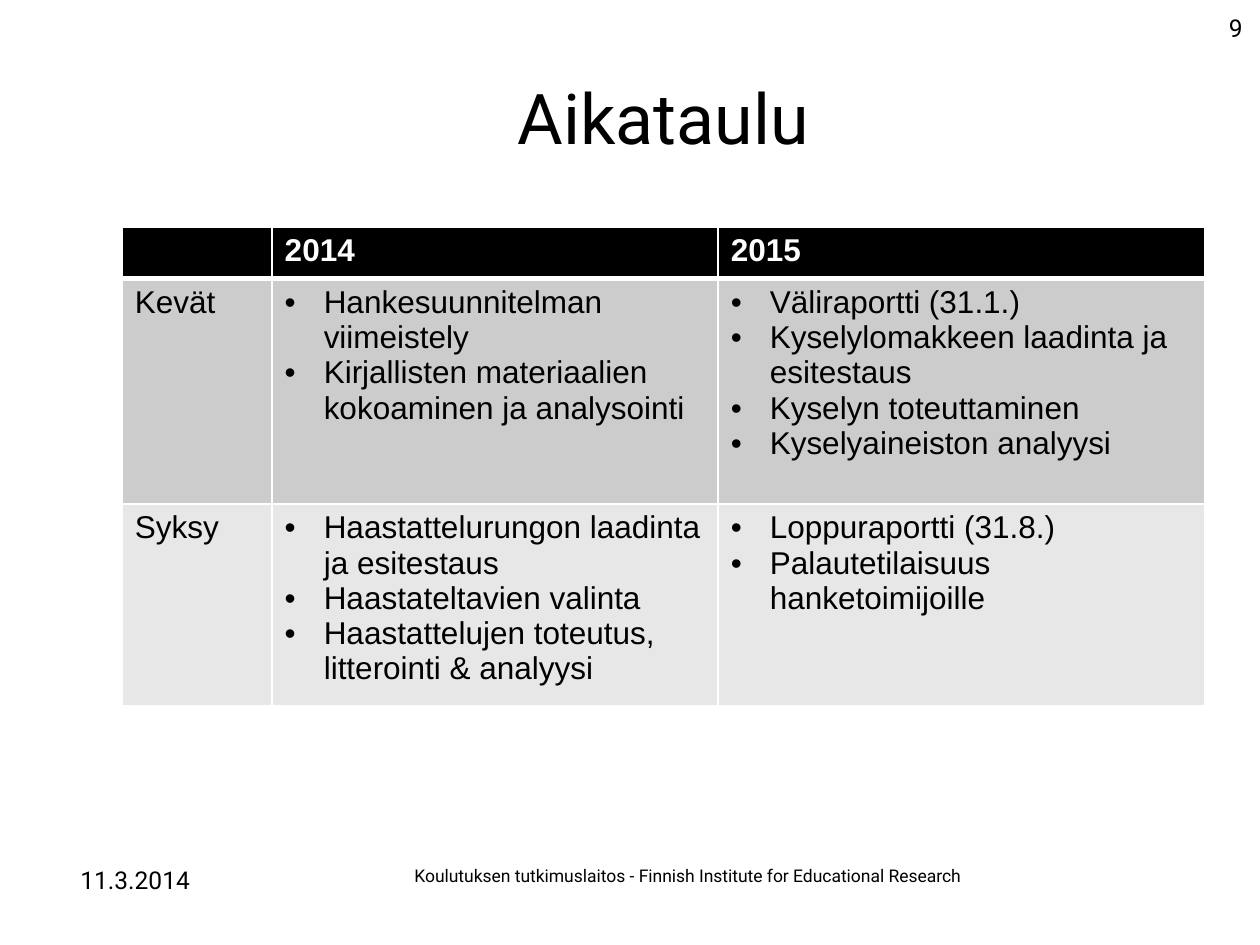
from pptx import Presentation
from pptx.dml.color import RGBColor as Rgb
from pptx.enum.text import MSO_ANCHOR as Anchor, PP_ALIGN as Align
from pptx.oxml import parse_xml
from pptx.oxml.ns import nsdecls
from pptx.util import Inches, Pt

COLORS = {"ink": "000000", "paper": "FFFFFF", "dark": "CCCCCC", "light": "E7E7E7"}
FILLS = ["ink", "dark", "light"]
WIDTHS = [1.19, 3.54, 3.86]
HEIGHTS = [0.41, 1.79, 1.5]
ROWS = [
    ["", "2014", "2015"],
    ["Kevät",
     ["Hankesuunnitelman viimeistely",
      "Kirjallisten materiaalien kokoaminen ja analysointi"],
     ["Väliraportti (31.1.)", "Kyselylomakkeen laadinta ja esitestaus",
      "Kyselyn toteuttaminen", "Kyselyaineiston analyysi"]],
    ["Syksy",
     ["Haastattelurungon laadinta ja esitestaus", "Haastateltavien valinta",
      "Haastattelujen toteutus, litterointi & analyysi"],
     ["Loppuraportti (31.8.)", "Palautetilaisuus hanketoimijoille"]],
]


class Deck:
    def __init__(self):
        self.prs = Presentation()
        self.prs.slide_width, self.prs.slide_height = Inches(10), Inches(7.5)
        self.slide = self.prs.slides.add_slide(self.prs.slide_layouts[6])

    def style(self, para, size, face, color="ink", bold=False):
        font = para.font
        font.size, font.name, font.bold = Pt(size), face, bold
        font.color.rgb = Rgb.from_string(COLORS[color])

    def text(self, words, box, size, align=Align.LEFT, anchor=Anchor.TOP):
        frame = self.slide.shapes.add_textbox(*map(Inches, box)).text_frame
        frame.word_wrap = True
        frame.vertical_anchor = anchor
        para = frame.paragraphs[0]
        para.text, para.alignment = words, align
        self.style(para, size, "Roboto")

    def bullet(self, para):
        props = para._p.get_or_add_pPr()
        props.set("marL", str(Inches(0.31)))
        props.set("indent", str(-Inches(0.31)))
        for tag in ('buFont typeface="Arial"', 'buChar char="•"'):
            props.append(parse_xml(f"<a:{tag} {nsdecls('a')}/>"))

    def border(self, cell, row):
        """Draw thin white edges, with a thick one below the header row."""
        props = cell._tc.get_or_add_tcPr()
        thick = {0: "B", 1: "T"}.get(row)
        for spot, side in enumerate("LRTB"):
            width = Pt(3 if side == thick else 1)
            props.insert(spot, parse_xml(
                f'<a:ln{side} {nsdecls("a")} w="{width}"><a:solidFill>'
                f'<a:srgbClr val="{COLORS["paper"]}"/></a:solidFill></a:ln{side}>'))

    def cell(self, cell, value, row):
        cell.fill.solid()
        cell.fill.fore_color.rgb = Rgb.from_string(COLORS[FILLS[row]])
        self.border(cell, row)
        listed = isinstance(value, list)
        frame = cell.text_frame
        frame.text = "\n".join(value) if listed else value
        for para in frame.paragraphs:
            if listed:
                self.bullet(para)
            self.style(para, 18, "Arial", "ink" if row else "paper", row == 0)

    def table(self, rows, left, top):
        size = map(Inches, (left, top, sum(WIDTHS), sum(HEIGHTS)))
        table = self.slide.shapes.add_table(len(rows), len(WIDTHS), *size).table
        for col, width in zip(table.columns, WIDTHS):
            col.width = Inches(width)
        for r, values in enumerate(rows):
            table.rows[r].height = Inches(HEIGHTS[r])
            for c, value in enumerate(values):
                self.cell(table.cell(r, c), value, r)


def main():
    deck = Deck()
    deck.text("Aikataulu", (0.97, 0.3, 8.59, 1.25), 40, Align.CENTER, Anchor.MIDDLE)
    deck.table(ROWS, 0.97, 1.8)
    deck.text("11.3.2014", (0.54, 6.82, 2.33, 0.36), 14)
    deck.text("Koulutuksen tutkimuslaitos - Finnish Institute for Educational Research",
              (3.19, 6.82, 4.65, 0.36), 10)
    deck.text("9", (9.52, 0.05, 0.44, 0.39), 14, Align.RIGHT)
    deck.prs.save("out.pptx")


if __name__ == "__main__":
    main()
